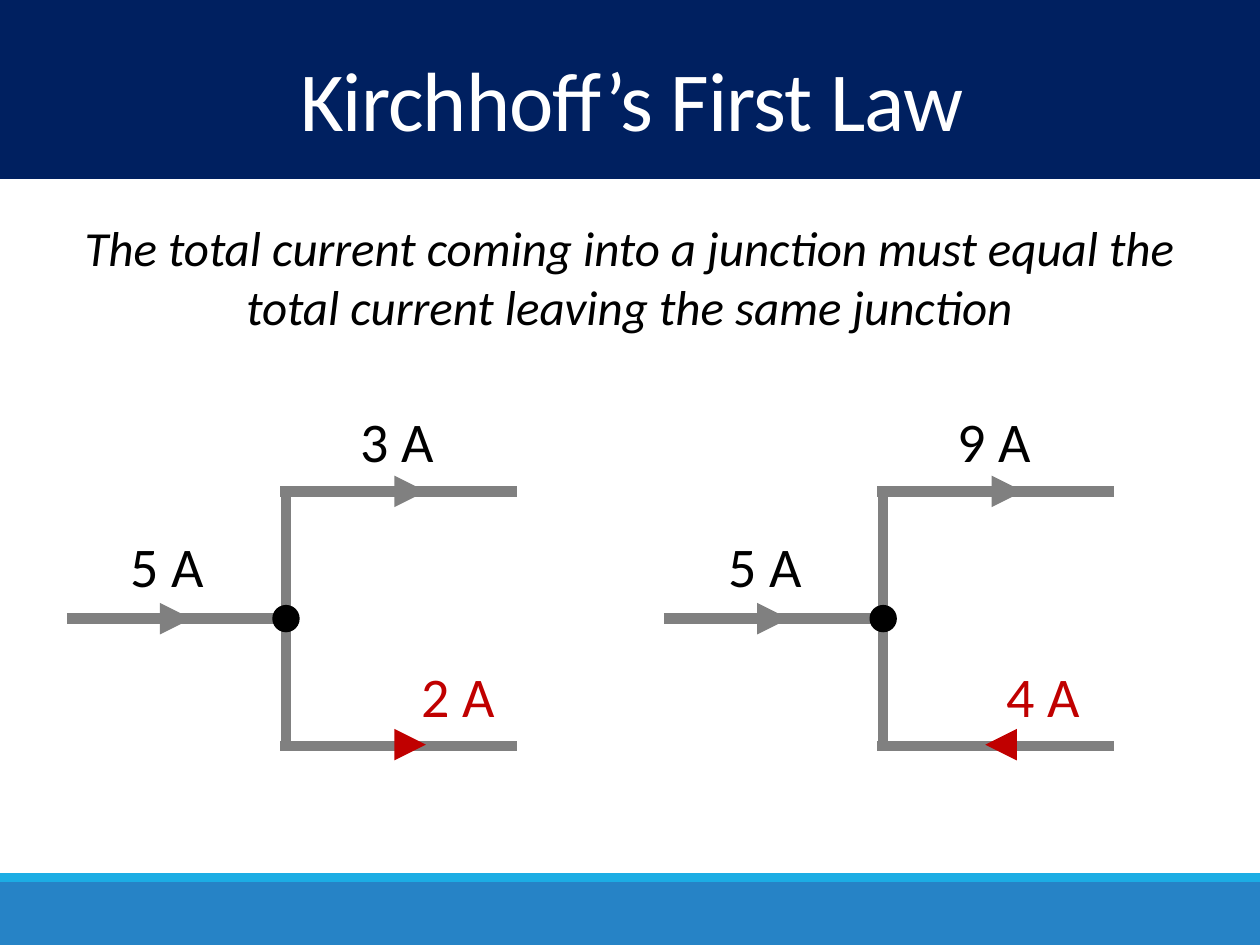
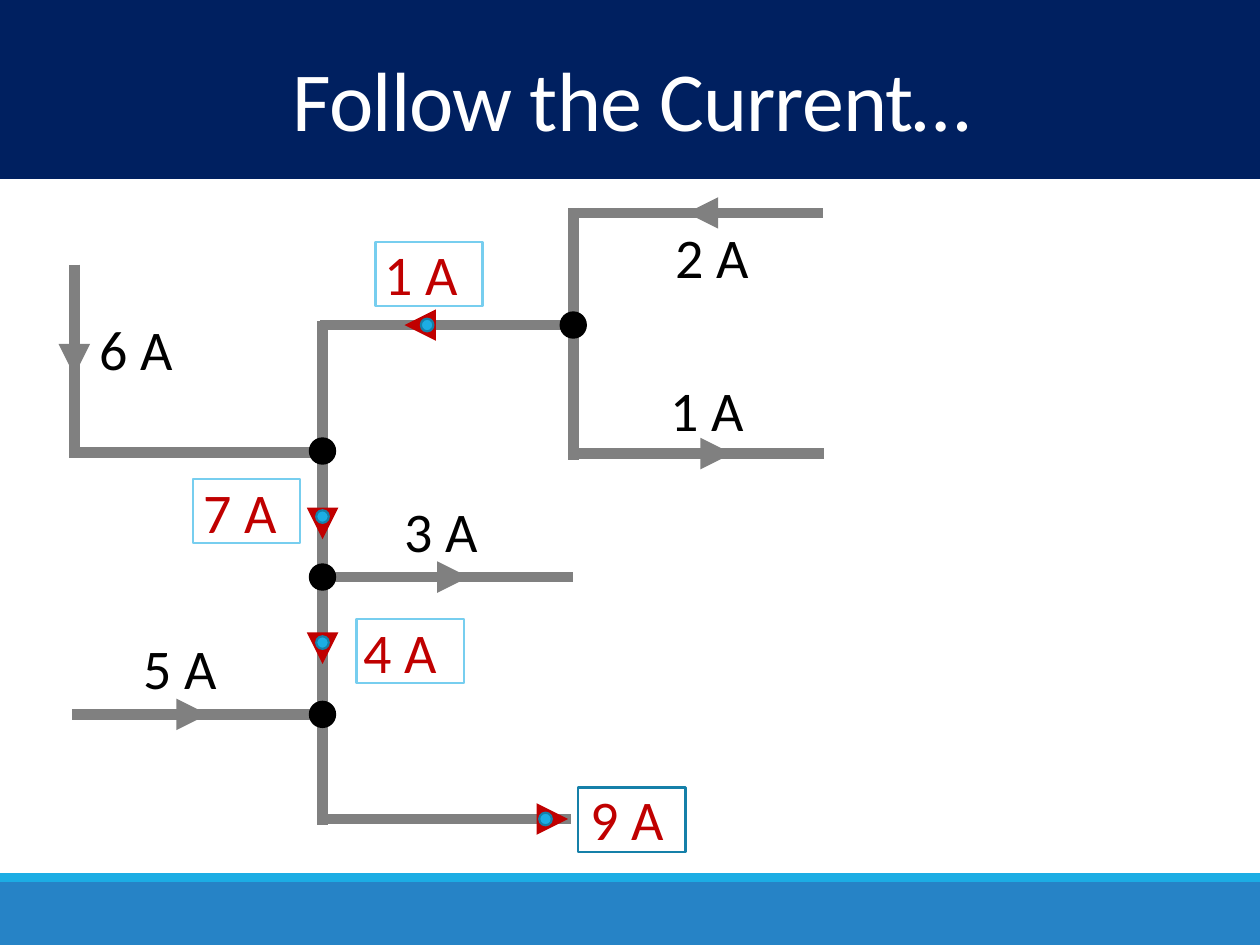
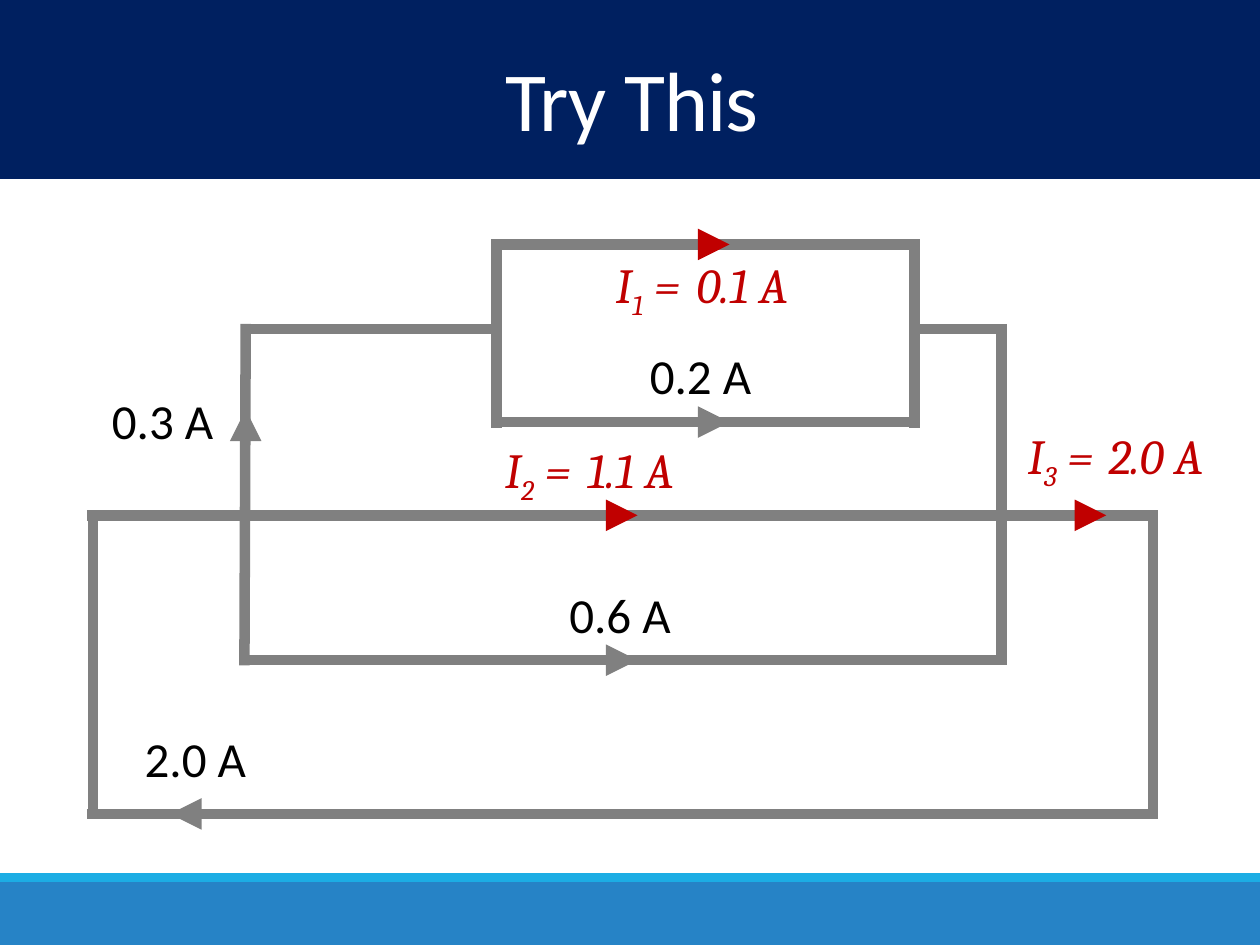
from pptx import Presentation
from pptx import util as u
from pptx.dml.color import RGBColor
from pptx.enum import shapes, text
from pptx.oxml.ns import qn
from lxml import etree

PX = 9144  # 100 px to the inch

NAVY = RGBColor(0x00, 0x20, 0x60)
BLUE = RGBColor(0x26, 0x83, 0xC6)
CYAN = RGBColor(0x1C, 0xAD, 0xE4)
DEEP_CYAN = RGBColor(0x15, 0x80, 0xA9)
PALE_CYAN = RGBColor(0x77, 0xCE, 0xEF)
GREY = RGBColor(0x80, 0x80, 0x80)
RED = RGBColor(0xC0, 0x00, 0x00)
BLACK = RGBColor(0x00, 0x00, 0x00)
WHITE = RGBColor(0xFF, 0xFF, 0xFF)

RECT, OVAL = shapes.MSO_SHAPE.RECTANGLE, shapes.MSO_SHAPE.OVAL
DOT, CHARGE = 20, 10
BOX_W, BOX_H = 85, 51


def add_patch(slide, kind, left, top, width, height, fill=None, outline=None):
    patch = slide.shapes.add_shape(kind, left * PX, top * PX, width * PX, height * PX)
    patch.shadow.inherit = False
    if fill is None:
        patch.fill.background()
    else:
        patch.fill.solid()
        patch.fill.fore_color.rgb = fill
    if outline is None:
        patch.line.fill.background()
    else:
        patch.line.color.rgb = outline
        patch.line.width = u.Pt(1.25)


def add_label(slide, left, top, width, height, words, size, color, font="Calibri", italic=False):
    """Words are (text, baseline) pairs; the baseline is in thousandths of a percent."""
    frame = slide.shapes.add_textbox(left * PX, top * PX, width * PX, height * PX).text_frame
    frame.word_wrap = True
    for word, baseline in words:
        run = frame.paragraphs[0].add_run()
        run.text = word
        run.font.size = u.Pt(size)
        run.font.name = font
        run.font.italic = italic
        run.font.color.rgb = color
        if baseline:
            run.font._element.set("baseline", str(baseline))
    return frame


# First law: the same junction twice, side by side
law = dict(title="Kirchhoff’s First Law", size=32, width=98, height=64,
           wires=[], arrows=[], dots=[], labels=[])
for x, branch in ((0, "3 A"), (474, "9 A")):
    law["wires"] += [(x + 53, 491, x + 227, 491), (x + 227, 390, x + 227, 592),
                     (x + 410, 390, x + 222, 390), (x + 410, 592, x + 222, 592)]
    law["arrows"] += [(x + 73, 491, x + 152, 491, GREY), (x + 259, 390, x + 338, 390, GREY)]
    law["dots"].append((x + 227, 491))
    law["labels"] += [(x + 94, 417, "5 A", BLACK), (x + 276, 318, branch, BLACK)]
law["arrows"] += [(318, 591, 338, 591, RED), (802, 591, 782, 591, RED)]
law["labels"] += [(325, 520, "2 A", RED), (789, 520, "4 A", RED)]

# Follow the current: a chain of four junctions
follow = dict(
    title="Follow the Current…", size=32, width=98, height=64,
    wires=[(55, 359, 255, 359), (256, 255, 256, 655), (59, 210, 59, 360),
           (254, 258, 454, 258), (255, 458, 455, 458), (57, 567, 257, 567),
           (253, 650, 453, 650), (455, 165, 455, 365), (454, 360, 654, 360),
           (453, 169, 653, 169)],
    arrows=[(145, 567, 165, 567, GREY), (59, 278, 59, 298, GREY), (352, 458, 372, 458, GREY),
            (561, 360, 581, 360, GREY), (565, 169, 545, 169, GREY),
            (341, 258, 321, 258, RED), (256, 407, 256, 428, RED),
            (256, 506, 256, 527, RED), (434, 650, 451, 650, RED)],
    dots=[(256, 358), (256, 458), (256, 567), (455, 258)],
    labels=[(69, 245, "6 A", BLACK), (104, 498, "5 A", BLACK), (311, 389, "3 A", BLACK),
            (522, 293, "1 A", BLACK), (526, 172, "2 A", BLACK), (295, 185, "1 A", RED),
            (152, 374, "7 A", RED), (279, 485, "4 A", RED), (459, 618, "9 A", RED)],
    boxes=[(298, 192, PALE_CYAN), (153, 380, PALE_CYAN), (283, 491, PALE_CYAN),
           (459, 625, DEEP_CYAN)],
    charges=[(339, 258), (256, 410), (256, 510), (433, 650)])

# Try this: nested loops with three unknown currents
practice = dict(
    title="Try This", size=28, width=114, height=57,
    wires=[(69, 409, 194, 409), (74, 409, 74, 646), (69, 646, 919, 646),
           (195, 257, 194, 528), (795, 409, 919, 409), (915, 409, 915, 646),
           (795, 257, 795, 528), (194, 524, 794, 524), (195, 409, 795, 409),
           (194, 261, 394, 261), (394, 190, 394, 340), (726, 190, 726, 340),
           (726, 261, 795, 261), (394, 335, 724, 335), (396, 194, 726, 194)],
    arrows=[(155, 646, 135, 646, GREY), (486, 524, 506, 524, GREY), (486, 409, 506, 409, RED),
            (559, 335, 579, 335, GREY), (559, 194, 579, 194, RED), (195, 345, 195, 325, GREY),
            (858, 409, 878, 409, RED)],
    dots=[],
    labels=[(105, 573, "2.0 A", BLACK), (79, 305, "0.3 A", BLACK),
            (506, 269, "0.2 A", BLACK), (442, 459, "0.6 A", BLACK)],
    unknowns=[("1", 479, 197, 91, 543, 185, "0.1 A"), ("2", 391, 344, 88, 456, 185, "1.1 A"),
              ("3", 806, 333, 95, 870, 103, "2.0 A")])

deck = Presentation()
deck.slide_width, deck.slide_height = 1000 * PX, 750 * PX

for circuit in (law, follow, practice):
    slide = deck.slides.add_slide(deck.slide_layouts[6])

    # Bands and title
    for top, height, color in ((700, 50, BLUE), (693, 7, CYAN), (0, 142, NAVY)):
        add_patch(slide, RECT, 0, top, 1000, height, color)
    heading = add_label(slide, 3, 42, 997, 84, [(circuit["title"], 0)], 48, WHITE)
    heading.vertical_anchor = text.MSO_ANCHOR.MIDDLE
    heading.paragraphs[0].alignment = text.PP_ALIGN.CENTER
    heading.paragraphs[0].line_spacing = 0.85
    heading.paragraphs[0].runs[0].font._element.set("spc", "-50")

    # Statement of the law
    if circuit is law:
        statement = add_label(
            slide, 28, 168, 943, 104,
            [("The total current coming into a junction must equal the "
              "total current leaving the same junction", 0)], 28, BLACK, italic=True)
        statement.paragraphs[0].alignment = text.PP_ALIGN.CENTER

    # Wires, then the arrows on them
    arrows = circuit["arrows"]
    for x1, y1, x2, y2, color in [(*wire, GREY) for wire in circuit["wires"]] + arrows:
        wire = slide.shapes.add_connector(shapes.MSO_CONNECTOR.STRAIGHT,
                                          x1 * PX, y1 * PX, x2 * PX, y2 * PX)
        wire.line.color.rgb = color
        wire.line.width = u.Pt(6)
        if (x1, y1, x2, y2, color) in arrows:
            etree.SubElement(wire.line._get_or_add_ln(), qn("a:tailEnd"), type="triangle")
        etree.SubElement(wire._element.spPr, qn("a:effectLst"))

    # Junctions, answer boxes and current labels
    for x, y in circuit["dots"]:
        add_patch(slide, OVAL, x - DOT // 2, y - DOT // 2, DOT, DOT, BLACK, BLACK)
    for left, top, color in circuit.get("boxes", []):
        add_patch(slide, RECT, left, top, BOX_W, BOX_H, outline=color)
    for left, top, current, color in circuit["labels"]:
        add_label(slide, left, top, circuit["width"], circuit["height"],
                  [(current, 0)], circuit["size"], color)

    # Moving charges and unknown currents
    for x, y in circuit.get("charges", []):
        add_patch(slide, OVAL, x - CHARGE // 2, y - CHARGE // 2, CHARGE, CHARGE, CYAN, DEEP_CYAN)
    for index, left, top, width, value_left, value_width, value in circuit.get("unknowns", []):
        add_label(slide, left, top, width, 57, [("I", 0), (index, -25000), (" =", 0)],
                  28, RED, "Cambria", True)
        add_label(slide, value_left, top, value_width, 57, [(value, 0)], 28, RED, "Cambria", True)

deck.save("out.pptx")
